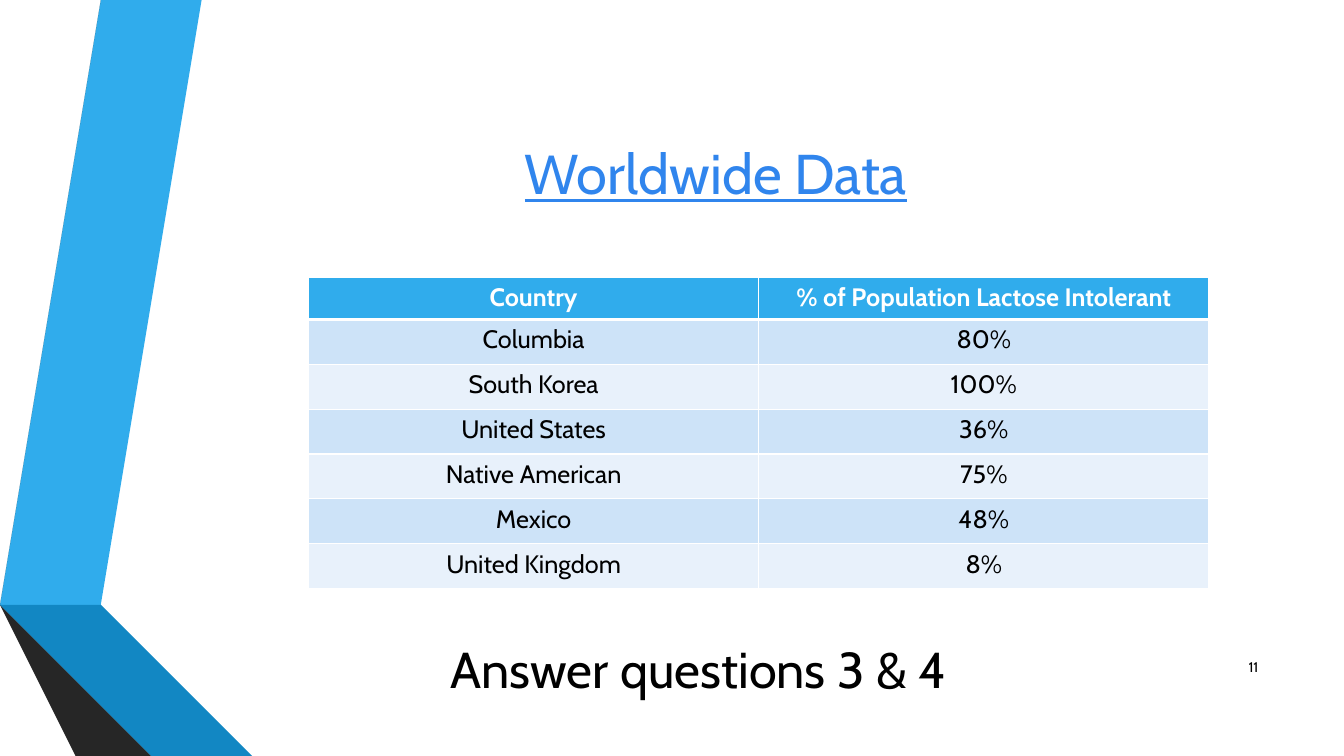
from pptx import Presentation, util as u
from pptx.dml.color import RGBColor
from pptx.enum import text as t
from pptx.oxml import parse_xml
from pptx.oxml.ns import nsdecls

COLORS = {
    "white": "FFFFFF", "black": "000000", "title": "3085ED",
    "sky": "30ACEC", "blue": "1287C3", "navy": "0C5A82",
    "gray": "595959", "charcoal": "404040", "coal": "262626",
    "band_dark": "CDE3F8", "band_light": "E8F1FB",
}
RIBBONS = [
    ("sky", [(0.5, 5.78), (0.77, 5.83), (1.73, 0), (1.45, 0)]),
    ("gray", [(1.39, 0), (1.11, 0), (0.16, 5.73), (0.44, 5.77)]),
    ("coal", [(0.16, 5.73), (1.45, 7.5), (1.51, 7.5)]),
    ("navy", [(0.5, 5.79), (2.08, 7.5), (2.14, 7.5)]),
    ("blue", [(0.5, 5.79), (2.14, 7.5), (2.83, 7.5), (0.77, 5.83), (0.5, 5.78)]),
    ("charcoal", [(2.02, 7.5), (0.48, 5.83), (0.43, 5.78), (0.44, 5.77),
                  (0.16, 5.73), (1.51, 7.5)]),
]
INTOLERANCE = [
    ("Country", "% of Population Lactose Intolerant"),
    ("Columbia", "80%"),
    ("South Korea", "100%"),
    ("United States", "36%"),
    ("Native American", "75%"),
    ("Mexico", "48%"),
    ("United Kingdom", "8%"),
]
HEADER_HEIGHT = 0.42
TABLE_HEIGHT = 3.09


def rgb(name):
    """Return the named colour."""
    return RGBColor.from_string(COLORS[name])


def write(frame, wording, size=18, color="black", bold=False, underline=False,
          align=t.PP_ALIGN.CENTER):
    """Put one formatted paragraph in a text frame."""
    paragraph = frame.paragraphs[0]
    paragraph.alignment = align
    run = paragraph.add_run()
    run.text = wording
    run.font.name = "Cabin"
    run.font.size = u.Pt(size)
    run.font.bold = bold
    run.font.underline = underline
    run.font.color.rgb = rgb(color)


def add_label(slide, box, wording, anchor=t.MSO_ANCHOR.MIDDLE, **style):
    """Add a wrapped text box with one line of text."""
    frame = slide.shapes.add_textbox(*map(u.Inches, box)).text_frame
    frame.word_wrap = True
    frame.vertical_anchor = anchor
    write(frame, wording, **style)


def add_ribbon(slide, color, points):
    """Draw one closed piece of the folded ribbons."""
    outline = slide.shapes.build_freeform(*points[0], scale=u.Inches(1))
    outline.add_line_segments(points[1:], close=True)
    ribbon = outline.convert_to_shape()
    ribbon.shadow.inherit = False
    ribbon.fill.solid()
    ribbon.fill.fore_color.rgb = rgb(color)
    ribbon.line.fill.background()


def add_borders(cell, **widths):
    """Give a cell white borders with widths in points by side."""
    for side, width in widths.items():
        cell._tc.get_or_add_tcPr().append(parse_xml(
            f'<a:ln{side} {nsdecls("a")} w="{u.Pt(width)}"><a:solidFill>'
            f'<a:srgbClr val="{COLORS["white"]}"/></a:solidFill></a:ln{side}>'))


def add_intolerance_table(slide):
    """Add the banded table of countries and percentages."""
    box = map(u.Inches, (3.06, 2.75, 8.93, TABLE_HEIGHT))
    table = slide.shapes.add_table(len(INTOLERANCE), 2, *box).table
    body_height = (TABLE_HEIGHT - HEADER_HEIGHT) / (len(INTOLERANCE) - 1)
    for r, entries in enumerate(INTOLERANCE):
        header = r == 0
        table.rows[r].height = u.Inches(HEADER_HEIGHT if header else body_height)
        band = "sky" if header else "band_dark" if r % 2 else "band_light"
        for c, entry in enumerate(entries):
            cell = table.cell(r, c)
            add_borders(cell, L=1, R=1, T=3 if r == 1 else 1, B=3 if header else 1)
            cell.fill.solid()
            cell.fill.fore_color.rgb = rgb(band)
            write(cell.text_frame, entry, bold=header,
                  color="white" if header else "black")


def main():
    """Build the slide and save it."""
    deck = Presentation()
    deck.slide_width, deck.slide_height = u.Inches(13.33), u.Inches(7.5)
    slide = deck.slides.add_slide(deck.slide_layouts[6])
    for color, points in RIBBONS:
        add_ribbon(slide, color, points)
    add_label(slide, (1.62, 0.75, 10.96, 1.92), "Worldwide Data",
              size=40, color="title", underline=True)
    add_intolerance_table(slide)
    add_label(slide, (4.37, 6.28, 5.46, 0.71), "Answer questions 3 & 4",
              anchor=t.MSO_ANCHOR.TOP, size=36, align=t.PP_ALIGN.LEFT)
    add_label(slide, (11.98, 6.42, 0.6, 0.4), "11", size=10, align=t.PP_ALIGN.RIGHT)
    deck.save("out.pptx")


if __name__ == "__main__":
    main()
